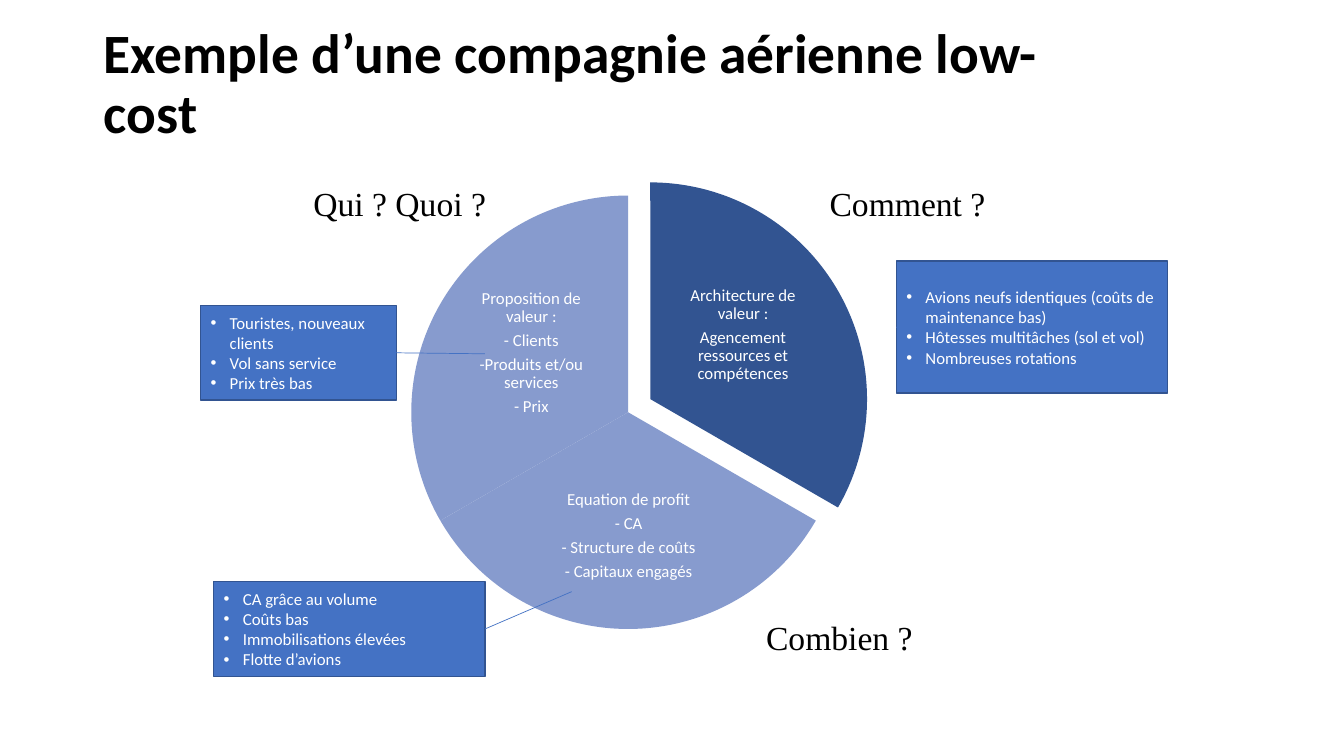
from pptx import Presentation
from pptx.dml.color import RGBColor
from pptx.enum.shapes import MSO_CONNECTOR, MSO_SHAPE
from pptx.enum.text import MSO_ANCHOR, MSO_AUTO_SIZE, PP_ALIGN
from pptx.oxml.ns import qn
from pptx.util import Inches, Pt
from lxml import etree

PIE, RECT, STRAIGHT = MSO_SHAPE.PIE, MSO_SHAPE.RECTANGLE, MSO_CONNECTOR.STRAIGHT
MIDDLE, LEFT, CENTER = MSO_ANCHOR.MIDDLE, PP_ALIGN.LEFT, PP_ALIGN.CENTER
NO_FIT = MSO_AUTO_SIZE.NONE

TITLE = "Exemple d’une compagnie aérienne low-cost"
DARK, LIGHT, BLUE, WHITE, BLACK = "325491", "879BCE", "4472C4", "FFFFFF", "000000"
SANS, SERIF = "Calibri", "Times New Roman"
DIAMETER = 4.3
INDENT = 0.19

SECTORS = [
    {"at": (4.3, 1.81), "angles": (162, 18), "fill": DARK,
     "box": (6.64, 2.61, 1.46, 1.43),
     "lines": ["Architecture de valeur :", "Agencement ressources et compétences"]},
    {"at": (4.08, 1.94), "angles": (18, 90), "fill": LIGHT,
     "box": (5.26, 4.65, 1.95, 1.33),
     "lines": ["Equation de profit", "- CA", "- Structure de coûts",
               "- Capitaux engagés"]},
    {"at": (4.08, 1.94), "angles": (90, 162), "fill": LIGHT,
     "box": (4.54, 2.79, 1.46, 1.43),
     "lines": ["Proposition de valeur :", "- Clients", "-Produits et/ou services",
               "- Prix"]},
]
QUESTIONS = [("Qui ? Quoi ?", 3.01, 1.77), ("Comment ?", 8.13, 1.77),
             ("Combien ?", 7.5, 6.07)]
CALLOUTS = [
    {"box": (1.99, 3.03, 1.94, 0.94), "side": 3, "target": (4.81, 3.51),
     "lines": ["Touristes, nouveaux clients", "Vol sans service", "Prix très bas"]},
    {"box": (2.12, 5.77, 2.69, 0.94), "side": 3, "target": (5.67, 5.87),
     "lines": ["CA grâce au volume", "Coûts bas", "Immobilisations élevées",
               "Flotte d’avions"]},
    {"box": (8.89, 2.59, 2.69, 1.31), "side": 1, "target": (8.98, 3.27),
     "lines": ["Avions neufs identiques (coûts de maintenance bas)",
               "Hôtesses multitâches (sol et vol)", "Nombreuses rotations"]},
]


def rgb(color):
    return RGBColor.from_string(color)


def inches(values):
    return [Inches(v) for v in values]


def write(tf, lines, size, color, font=SANS, align=LEFT, bold=False):
    tf.word_wrap = True
    for i, line in enumerate(lines):
        p = tf.paragraphs[0] if i == 0 else tf.add_paragraph()
        p.alignment = align
        r = p.add_run()
        r.text = line
        r.font.name, r.font.size, r.font.bold = font, Pt(size), bold
        r.font.color.rgb = rgb(color)


def add_bullet(p):
    pPr = p._p.get_or_add_pPr()
    pPr.set("marL", str(Inches(INDENT)))
    pPr.set("indent", str(-Inches(INDENT)))
    etree.SubElement(pPr, qn("a:buFont")).set("typeface", "Arial")
    etree.SubElement(pPr, qn("a:buChar")).set("char", "•")


def add_solid(shapes, kind, box, fill):
    sp = shapes.add_shape(kind, *inches(box))
    sp.shadow.inherit = False
    sp.fill.solid()
    sp.fill.fore_color.rgb = rgb(fill)
    return sp


def add_sector(shapes, sector):
    sp = add_solid(shapes, PIE, (*sector["at"], DIAMETER, DIAMETER), sector["fill"])
    sp.line.fill.background()
    for i, angle in enumerate(sector["angles"]):
        sp.adjustments[i] = angle
    tf = shapes.add_textbox(*inches(sector["box"])).text_frame
    tf.margin_left = tf.margin_right = tf.margin_top = tf.margin_bottom = Inches(0.02)
    tf.vertical_anchor = MIDDLE
    write(tf, sector["lines"], 12, WHITE, align=CENTER)
    for p in tf.paragraphs:
        p.line_spacing = 0.9
        p.space_after = Pt(4.2)


def add_callout(shapes, callout):
    sp = add_solid(shapes, RECT, callout["box"], BLUE)
    sp.line.color.rgb = rgb(DARK)
    sp.line.width = Pt(1)
    tf = sp.text_frame
    tf.vertical_anchor = MIDDLE
    write(tf, callout["lines"], 12, WHITE)
    for p in tf.paragraphs:
        add_bullet(p)
    return sp


def add_link(shapes, sp, callout):
    target = inches(callout["target"])
    line = shapes.add_connector(STRAIGHT, sp.left, sp.top, *target)
    line.begin_connect(sp, callout["side"])
    line.line.color.rgb = rgb(BLUE)
    line.line.width = Pt(0.5)
    etree.SubElement(line._element.spPr, qn("a:effectLst"))


def main():
    prs = Presentation()
    prs.slide_width, prs.slide_height = Inches(13.33), Inches(7.5)
    s = prs.slides.add_slide(prs.slide_layouts[5])
    shapes = s.shapes

    title = shapes.title
    title.left, title.top, title.width, title.height = inches((0.93, 0.22, 9.98, 1.25))
    tf = title.text_frame
    tf.auto_size = NO_FIT
    tf.vertical_anchor = MIDDLE
    write(tf, [TITLE], 39.6, BLACK, bold=True)
    tf.paragraphs[0].line_spacing = 0.9

    for sector in SECTORS:
        add_sector(shapes, sector)
    for text, x, y in QUESTIONS:
        box = shapes.add_textbox(*inches((x, y, 2.5, 0.51)))
        write(box.text_frame, [text], 24, BLACK, SERIF)
    boxes = [add_callout(shapes, callout) for callout in CALLOUTS]
    for sp, callout in zip(boxes, CALLOUTS):
        add_link(shapes, sp, callout)

    prs.save("out.pptx")


if __name__ == "__main__":
    main()
